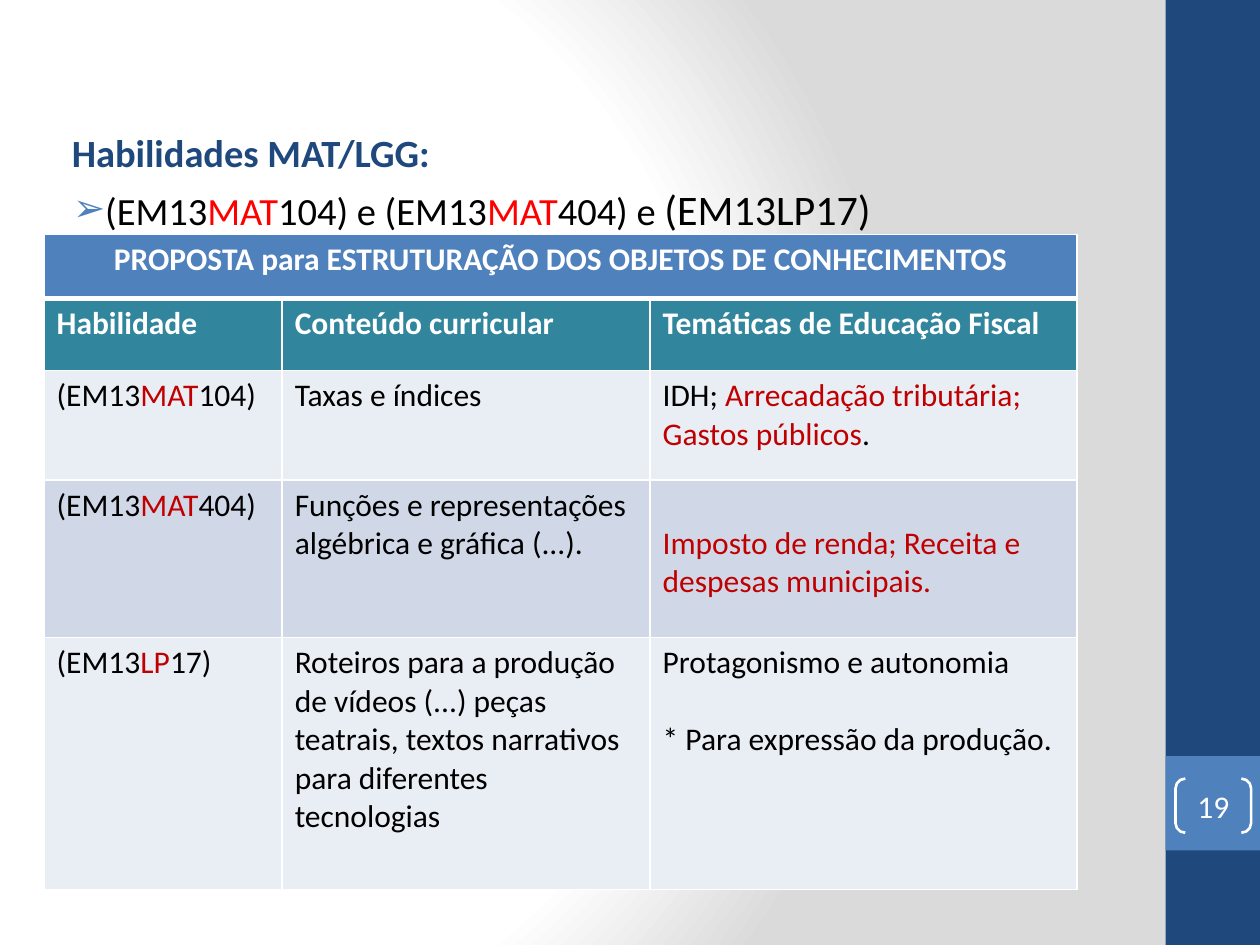
from lxml.etree import SubElement
from pptx import Presentation
from pptx.dml.color import RGBColor
from pptx.enum.shapes import MSO_SHAPE
from pptx.enum.text import MSO_ANCHOR, MSO_AUTO_SIZE, PP_ALIGN
from pptx.oxml import parse_xml
from pptx.oxml.ns import nsdecls, qn
from pptx.util import Inches, Pt


def hue(code):
    return RGBColor.from_string(code)


def write(par, runs, size, tint="000000", bold=False):
    for text, code in runs:
        run = par.add_run()
        run.text = text
        if code:
            run.font.color.rgb = hue(code)
    font = par.font
    font.name, font.size, font.bold = "Calibri", Pt(size), bold
    font.color.rgb = hue(tint)


deck = Presentation()
deck.slide_width, deck.slide_height = Inches(10), Inches(7.5)
wide, high = deck.slide_width, deck.slide_height
slide = deck.slides.add_slide(deck.slide_layouts[1])
title = slide.shapes.title.element
title.getparent().remove(title)

stops = "".join(
    f'<a:gs pos="{pos * 1000}"><a:srgbClr val="{code}"/></a:gs>'
    for pos, code in [(0, "FFFFFF"), (75, "FFFFFF"), (100, "DADADA")]
)
slide.element.cSld.insert(0, parse_xml(
    f'<p:bg {nsdecls("p", "a")}><p:bgPr><a:gradFill rotWithShape="1">'
    f'<a:gsLst>{stops}</a:gsLst><a:path path="circle">'
    '<a:fillToRect l="20000" t="50000" r="100000" b="50000"/></a:path>'
    '</a:gradFill><a:effectLst/></p:bgPr></p:bg>'
))

side = int(wide * 0.075)
for top, tall, code in [(0, high, "1F497D"), (int(high * 0.8), side, "4F81BD")]:
    band = slide.shapes.add_shape(MSO_SHAPE.RECTANGLE, wide - side, top, side, tall)
    band.shadow.inherit = False
    band.fill.solid()
    band.fill.fore_color.rgb = hue(code)
    band.line.fill.background()

body = slide.placeholders[1]
body.left, body.top = Inches(0.35), Inches(0.52)
body.width, body.height = Inches(9.13), Inches(6.69)
frame = body.text_frame
frame.auto_size = MSO_AUTO_SIZE.NONE
frame.margin_top = Inches(0.5)
red = "FF0000"
lines = [
    (0.12, 0, 0, "1F497D", True, [("Habilidades MAT/LGG:", None)]),
    (0.38, -0.25, 4.8, "000000", False, [
        ("(EM13", None), ("MAT", red), ("104) e (EM13", None),
        ("MAT", red), ("404) e ", None), ("(EM13LP17)", None)]),
]
for num, (left, hang, gap, tint, bold, runs) in enumerate(lines):
    par = frame.add_paragraph() if num else frame.paragraphs[0]
    par.space_before = Pt(gap)
    prop = par._p.get_or_add_pPr()
    prop.set("marL", str(Inches(left)))
    prop.set("indent", str(Inches(hang)))
    if hang:
        SubElement(SubElement(prop, qn("a:buClr")), qn("a:srgbClr")).set("val", "4F81BD")
        SubElement(prop, qn("a:buChar")).set("char", "➢")
    else:
        SubElement(prop, qn("a:buNone"))
    write(par, runs, 22, tint, bold)
par.runs[-1].font.size = Pt(24)

mark = slide.shapes.add_shape(
    MSO_SHAPE.DOUBLE_BRACKET, Inches(9.33), Inches(6.18), Inches(0.6), Inches(0.43))
mark.adjustments[0] = 0.18
mark.shadow.inherit = False
mark.fill.background()
mark.line.color.rgb = hue("FFFFFF")
mark.line.width = Pt(1.5)
frame = mark.text_frame
frame.margin_left = frame.margin_right = frame.margin_top = frame.margin_bottom = 0
frame.vertical_anchor = MSO_ANCHOR.MIDDLE
frame.paragraphs[0].alignment = PP_ALIGN.CENTER
write(frame.paragraphs[0], [("19", None)], 18, "FFFFFF")

cols = [1.89, 2.92, 3.39]
rows = [0.51, 0.57, 0.87, 1.25, 2]
fills = ["4F81BD", "31859C", "E9EDF4", "D0D8E8", "E9EDF4"]
dark = "C00000"
cells = [
    [[[("PROPOSTA para ESTRUTURAÇÃO DOS OBJETOS DE CONHECIMENTOS", None)]], [], []],
    [[[("Habilidade", None)]], [[("Conteúdo curricular", None)]],
     [[("Temáticas de Educação Fiscal", None)]]],
    [[[("(EM13", None), ("MAT", dark), ("104)", None)]],
     [[("Taxas e índices", None)]],
     [[("IDH; ", None), ("Arrecadação tributária; Gastos públicos", dark), (".", None)]]],
    [[[("(EM13", None), ("MAT", dark), ("404)", None)]],
     [[("Funções e representações algébrica e gráfica (...).", None)]],
     [[("Imposto de renda; Receita e despesas municipais.", dark)]]],
    [[[("(EM13", None), ("LP", dark), ("17)", None)]],
     [[("Roteiros para a produção de vídeos (...) peças", None)],
      [("teatrais, textos narrativos para diferentes tecnologias", None)]],
     [[("Protagonismo e autonomia", None)], [("* Para expressão da produção.", None)]]],
]
grid = slide.shapes.add_table(
    len(rows), len(cols), Inches(0.35), Inches(1.86),
    Inches(sum(cols)), Inches(sum(rows))).table
for col, size in zip(grid.columns, cols):
    col.width = Inches(size)
for row, size in zip(grid.rows, rows):
    row.height = Inches(size)
for r, line in enumerate(cells):
    for c, pars in enumerate(line):
        cell = grid.cell(r, c)
        cell.fill.solid()
        cell.fill.fore_color.rgb = hue(fills[r])
        for num, edge in enumerate("LRTB"):
            thick = 3 if (r, edge) in [(0, "B"), (1, "T")] else 1
            cell._tc.get_or_add_tcPr().insert(num, parse_xml(
                f'<a:ln{edge} {nsdecls("a")} w="{Pt(thick)}"><a:solidFill>'
                f'<a:srgbClr val="FFFFFF"/></a:solidFill></a:ln{edge}>'))
        frame = cell.text_frame
        for num, runs in enumerate(pars):
            par = frame.add_paragraph() if num else frame.paragraphs[0]
            write(par, runs, 18, "FFFFFF" if r < 2 else "000000", r < 2)

grid.cell(0, 0).merge(grid.cell(0, 2))
grid.cell(0, 0).text_frame.paragraphs[0].alignment = PP_ALIGN.CENTER
grid.cell(3, 2).margin_top = Inches(0.35)
grid.cell(4, 2).text_frame.paragraphs[1].space_before = Pt(22)

deck.save("out.pptx")
